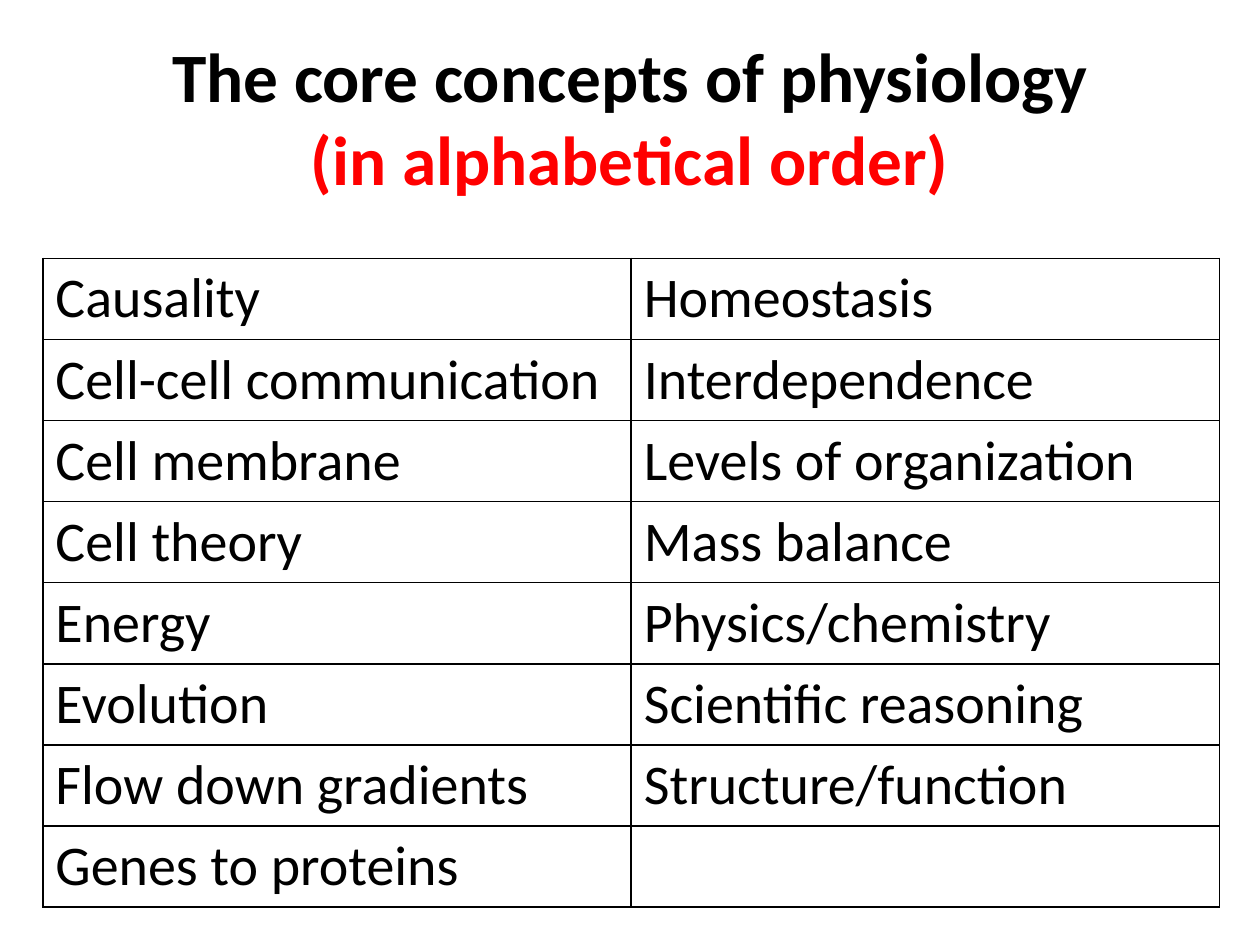
from itertools import zip_longest

from lxml.etree import SubElement
from pptx import Presentation
from pptx.dml.color import RGBColor as RGB
from pptx.enum.text import MSO_ANCHOR as Anchor, MSO_AUTO_SIZE as AutoSize, PP_ALIGN as Align
from pptx.oxml.ns import qn
from pptx.util import Inches, Pt

HEADING = "The core concepts of physiology"
ORDER_NOTE = "(in alphabetical order)"
LEFT_CONCEPTS = [
    "Causality", "Cell-cell communication", "Cell membrane", "Cell theory",
    "Energy", "Evolution", "Flow down gradients", "Genes to proteins",
]
RIGHT_CONCEPTS = [
    "Homeostasis", "Interdependence", "Levels of organization", "Mass balance",
    "Physics/chemistry", "Scientific reasoning", "Structure/function",
]
THEME = {
    "font": "Calibri", "ink": "000000", "accent": "FF0000",
    "title_size": 39.6, "cell_size": 32, "border": 1,
}
TABLE_LEFT, TABLE_TOP = 0.34, 2.05
COLUMN_WIDTH, ROW_HEIGHT = 4.67, 0.64


def add_text(paragraph, text, *, size, color=THEME["ink"], bold=False):
    run = paragraph.add_run()
    run.text = text
    run.font.name = THEME["font"]
    run.font.size = Pt(size)
    run.font.bold = bold
    run.font.color.rgb = RGB.from_string(color)


def outline(cell):
    """Draw all four borders; they must precede the cell's fill in the XML."""
    properties = cell._tc.get_or_add_tcPr()
    for side in ("a:lnL", "a:lnR", "a:lnT", "a:lnB"):
        line = SubElement(properties, qn(side), w=str(Pt(THEME["border"])))
        fill = SubElement(line, qn("a:solidFill"))
        SubElement(fill, qn("a:srgbClr"), val=THEME["ink"])


def add_title(slide):
    title = slide.shapes.title
    title.left, title.top = Inches(0.5), Inches(0.3)
    title.width, title.height = Inches(9), Inches(1.25)
    frame = title.text_frame
    frame.word_wrap = True
    frame.auto_size = AutoSize.NONE
    frame.vertical_anchor = Anchor.MIDDLE
    paragraph = frame.paragraphs[0]
    paragraph.alignment = Align.CENTER
    add_text(paragraph, HEADING, size=THEME["title_size"], bold=True)
    paragraph.add_line_break()
    add_text(paragraph, ORDER_NOTE, size=THEME["title_size"],
             color=THEME["accent"], bold=True)


def add_concepts(slide):
    rows = list(zip_longest(LEFT_CONCEPTS, RIGHT_CONCEPTS))
    table = slide.shapes.add_table(
        len(rows), 2, Inches(TABLE_LEFT), Inches(TABLE_TOP),
        Inches(2 * COLUMN_WIDTH), Inches(len(rows) * ROW_HEIGHT)).table
    table.first_row = table.horz_banding = False
    for row, concepts in enumerate(rows):
        for column, concept in enumerate(concepts):
            cell = table.cell(row, column)
            outline(cell)
            cell.fill.background()
            if concept:
                add_text(cell.text_frame.paragraphs[0], concept,
                         size=THEME["cell_size"])


def main():
    deck = Presentation()
    deck.slide_width, deck.slide_height = Inches(10), Inches(7.5)
    slide = deck.slides.add_slide(deck.slide_layouts[5])
    add_title(slide)
    add_concepts(slide)
    deck.save("out.pptx")


if __name__ == "__main__":
    main()
